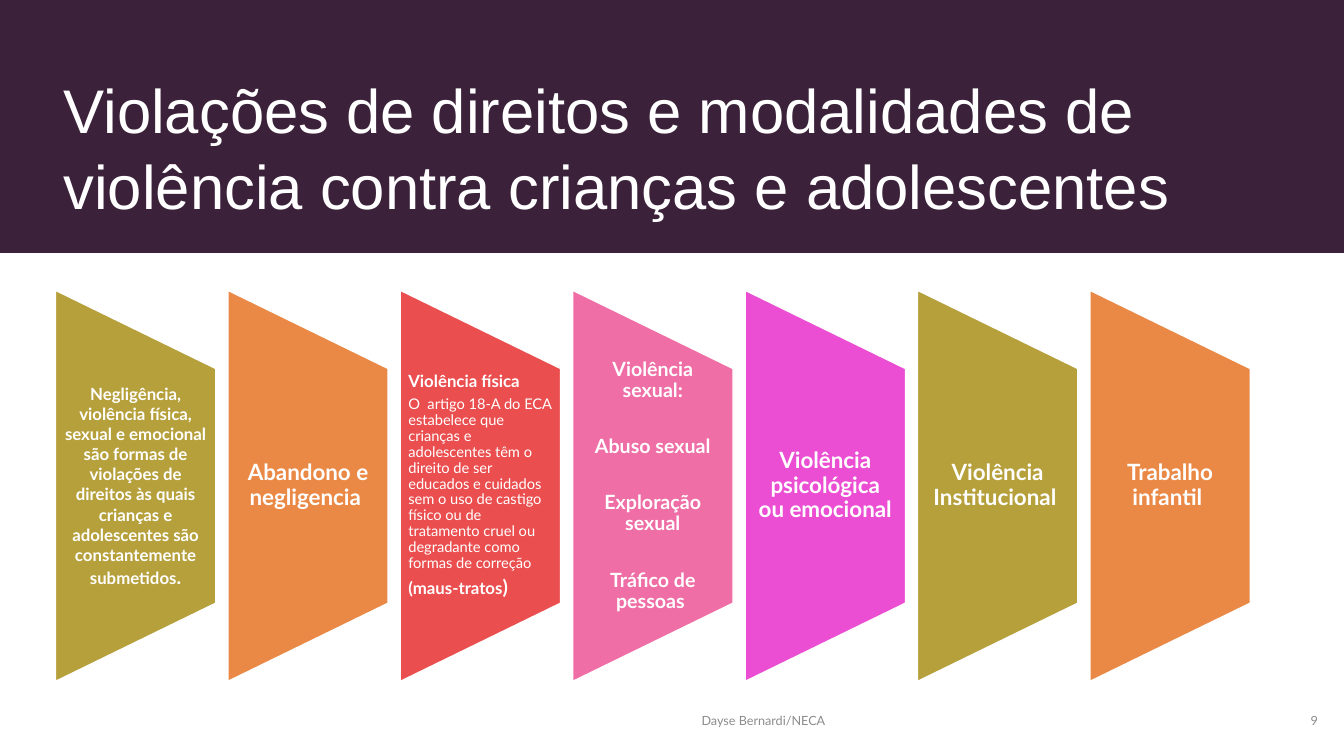
"""Builds the slide on violations of the rights of children and adolescents."""
import pptx
import pptx.dml.color
import pptx.enum.shapes
import pptx.enum.text
import pptx.util

Inches = pptx.util.Inches
Pt = pptx.util.Pt
RGBColor = pptx.dml.color.RGBColor
ALIGN = pptx.enum.text.PP_ALIGN
ANCHOR = pptx.enum.text.MSO_ANCHOR
SHAPE = pptx.enum.shapes.MSO_SHAPE

WHITE = RGBColor(0xFF, 0xFF, 0xFF)
PLUM = RGBColor(0x3B, 0x21, 0x3A)
OLIVE = RGBColor(0xB6, 0xA0, 0x3C)
ORANGE = RGBColor(0xEA, 0x89, 0x46)
RED = RGBColor(0xEB, 0x4E, 0x4F)
PINK = RGBColor(0xEE, 0x6E, 0xA5)
MAGENTA = RGBColor(0xEB, 0x4E, 0xD2)
GRAY = RGBColor(0x8C, 0x8C, 0x8C)

PANEL_LEFT, PANEL_PITCH = 0.55, 1.71
PANEL_WIDTH, PANEL_HEIGHT, PANEL_MIDDLE = 1.59, 3.88, 4.82
LABEL_HEIGHT = 2.33


def add_filled(slide, preset, left, top, width, height, color):
    """Add a flat preset shape without shadow or outline."""
    shape = slide.shapes.add_shape(
        preset, Inches(left), Inches(top), Inches(width), Inches(height))
    shape.shadow.inherit = False
    shape.fill.solid()
    shape.fill.fore_color.rgb = color
    shape.line.fill.background()
    return shape


def add_text_frame(slide, left, top, width, height, anchor=ANCHOR.MIDDLE):
    """Add a wrapping text box and return its text frame."""
    box = slide.shapes.add_textbox(
        Inches(left), Inches(top), Inches(width), Inches(height))
    frame = box.text_frame
    frame.word_wrap = True
    frame.vertical_anchor = anchor
    return frame


def add_run(paragraph, text, size, color=WHITE, bold=False, font="Lato"):
    """Append a formatted run to a paragraph."""
    run = paragraph.add_run()
    run.text = text
    run.font.name = font
    run.font.size = Pt(size)
    run.font.bold = bold
    run.font.color.rgb = color


def add_panel(slide, index, color, paragraphs, inset=0.11, align=ALIGN.CENTER,
              line_spacing=0.9, gap=4.5):
    """Add one tapered panel with its label, given as lists of runs."""
    left = PANEL_LEFT + index * PANEL_PITCH
    panel = add_filled(
        slide, SHAPE.FLOWCHART_MANUAL_OPERATION,
        left + (PANEL_WIDTH - PANEL_HEIGHT) / 2, PANEL_MIDDLE - PANEL_WIDTH / 2,
        PANEL_HEIGHT, PANEL_WIDTH, color)
    panel.rotation = 270
    panel.line.color.rgb = WHITE
    panel.line.width = Pt(1)

    label = add_text_frame(slide, left, PANEL_MIDDLE - LABEL_HEIGHT / 2,
                           PANEL_WIDTH, LABEL_HEIGHT)
    label.margin_left = label.margin_right = Inches(inset)
    label.margin_top = label.margin_bottom = 0
    for number, runs in enumerate(paragraphs):
        paragraph = label.add_paragraph() if number else label.paragraphs[0]
        paragraph.alignment = align
        paragraph.line_spacing = line_spacing
        paragraph.space_after = Pt(gap if number < len(paragraphs) - 1 else 4.5)
        for text, size, bold in runs:
            add_run(paragraph, text, size, bold=bold)


def add_footer(slide, left, width, text, align):
    """Add a small gray footer text."""
    paragraph = add_text_frame(slide, left, 6.95, width, 0.4).paragraphs[0]
    paragraph.alignment = align
    add_run(paragraph, text, 9, GRAY)


def main():
    """Build and save the slide."""
    deck = pptx.Presentation()
    deck.slide_width, deck.slide_height = Inches(13.33), Inches(7.5)
    slide = deck.slides.add_slide(deck.slide_layouts[6])

    add_filled(slide, SHAPE.RECTANGLE, 0, 0, 13.33, 2.51, PLUM)
    title = add_text_frame(slide, 0.53, 0.4, 11.89, 1.85, ANCHOR.BOTTOM).paragraphs[0]
    title.line_spacing = 1.03
    add_run(title, "Violações de direitos e modalidades de violência contra "
            "crianças e adolescentes", 44, font="Arial")

    rights = [[
        ("Negligência, violência física, sexual e emocional são formas de "
         "violações de direitos às quais crianças e adolescentes são "
         "constantemente submetidos", 12, True),
        (".", 14, True)]]
    physical = [
        [("Violência física", 12, True)],
        [("O  artigo 18-A do ECA estabelece que crianças e adolescentes têm o "
          "direito de ser educados e cuidados sem o uso de castigo físico ou de "
          "tratamento cruel ou degradante como formas de correção", 10.5, False)],
        [("(maus-tratos", 12, True), (")", 14, True)]]
    sexual = [[(text, 14, True)] for text in (
        "Violência sexual:", "Abuso sexual", "Exploração sexual",
        "Tráfico de pessoas ")]

    add_panel(slide, 0, OLIVE, rights, inset=0.08, line_spacing=1.0)
    add_panel(slide, 2, RED, physical, inset=0.08, align=ALIGN.LEFT, gap=4)
    add_panel(slide, 3, PINK, sexual, inset=0.1, gap=25)
    for index, color, text in (
            (1, ORANGE, "Abandono e negligencia "),
            (4, MAGENTA, "Violência psicológica ou emocional "),
            (5, OLIVE, "Violência Institucional "),
            (6, ORANGE, "Trabalho infantil ")):
        add_panel(slide, index, color, [[(text, 16, True)]])

    add_footer(slide, 6.86, 4.5, "Dayse Bernardi/NECA", ALIGN.LEFT)
    add_footer(slide, 11.77, 1.4, "9", ALIGN.RIGHT)
    deck.save("out.pptx")


if __name__ == "__main__":
    main()
